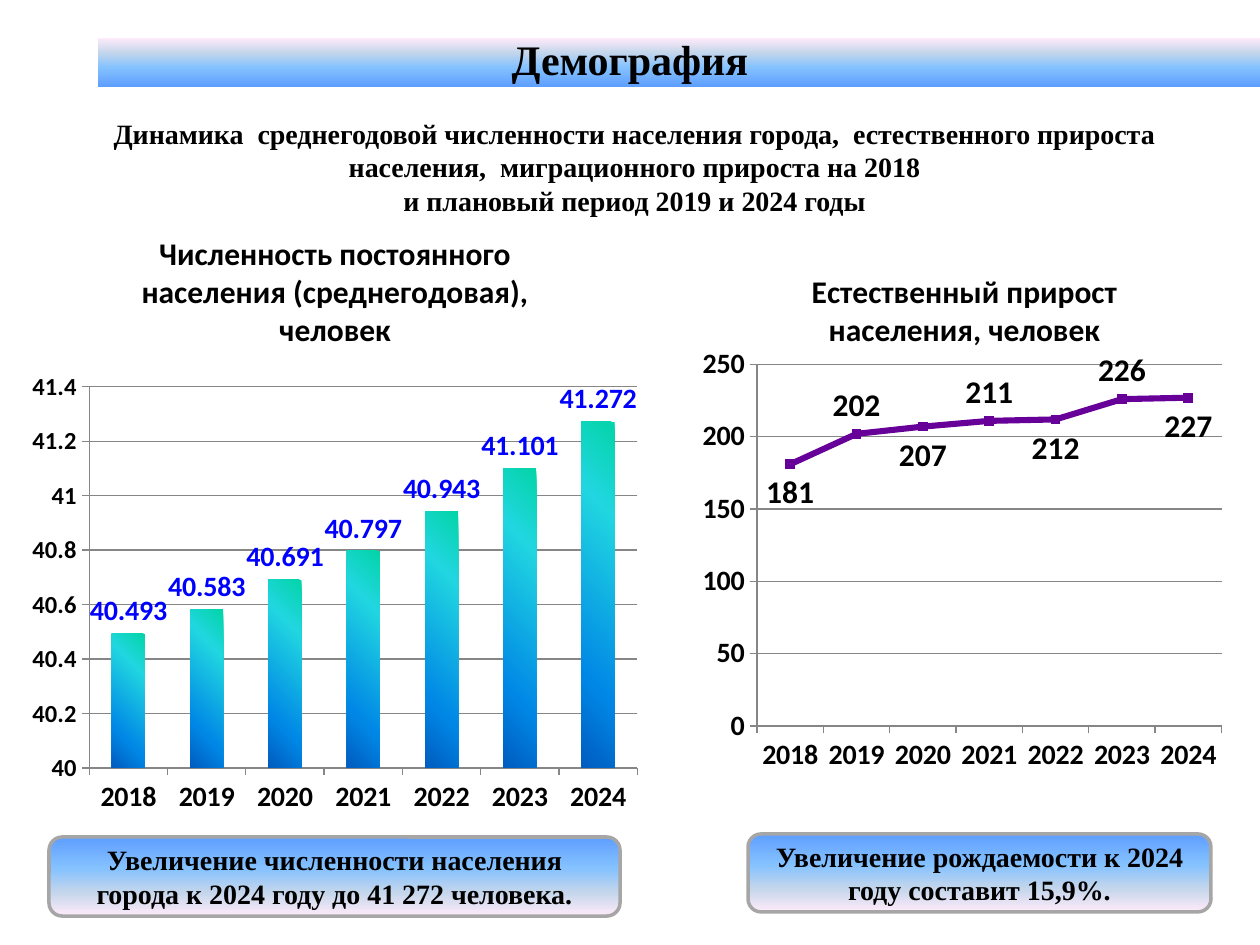
from pptx import Presentation
from pptx.chart.data import CategoryChartData
from pptx.dml.color import RGBColor
from pptx.enum.chart import XL_CHART_TYPE, XL_LABEL_POSITION, XL_MARKER_STYLE, XL_TICK_MARK
from pptx.enum.shapes import MSO_SHAPE
from pptx.enum.text import MSO_ANCHOR, PP_ALIGN
from pptx.oxml import parse_xml
from pptx.oxml.ns import nsdecls, qn
from pptx.util import Emu, Pt

TITLE = "Демография"
SUBTITLE = [
    "Динамика  среднегодовой численности населения города,  естественного прироста "
    "населения,  миграционного прироста на 2018",
    "и плановый период 2019 и 2024 годы",
]
NOTES = [
    ((49, 837, 571, 79), "Увеличение численности населения города к 2024 году до 41 272 человека."),
    ((748, 834, 463, 78), "Увеличение рождаемости к 2024 году составит 15,9%."),
]
YEARS = [str(y) for y in range(2018, 2025)]
POPULATION = dict(
    kind=XL_CHART_TYPE.COLUMN_CLUSTERED, box=(20, 207, 630, 620),
    title="Численность постоянного населения (среднегодовая), человек",
    values=[40.493, 40.583, 40.691, 40.797, 40.943, 41.101, 41.272],
    scale=(40, 41.4, 0.2), tick_size=14, plot=(0.11, 0.29, 0.87, 0.615),
)
GROWTH = dict(
    kind=XL_CHART_TYPE.LINE_MARKERS, box=(669, 246, 591, 559),
    title="Естественный прирост населения, человек",
    values=[181, 202, 207, 211, 212, 226, 227],
    scale=(0, 250, 50), tick_size=16, plot=(0.149, 0.212, 0.786, 0.647),
)
SKY = [(0, "5E9EFF"), (40, "85C2FF"), (70, "C4D6EB"), (100, "FFEBFA")]
SEA = [(0, "03D4A8"), (25, "21D6E0"), (75, "0087E6"), (100, "005CBF")]
PURPLE, GRID = "660099", "868686"


def px(v):
    return Emu(round(v * 914400 / 126))


def rgb(c):
    return RGBColor.from_string(c)


def set_font(font, size, color="000000", name="Calibri"):
    font.size, font.bold, font.name = Pt(size), True, name
    font.color.rgb = rgb(color)


def set_gradient(fill, spPr, stops, angle):
    fill.gradient()
    fill.gradient_angle = 360 - angle
    old = spPr.find(qn("a:gradFill")).find(qn("a:gsLst"))
    gs = "".join(f'<a:gs pos="{p * 1000}"><a:srgbClr val="{c}"/></a:gs>' for p, c in stops)
    old.getparent().replace(old, parse_xml(f'<a:gsLst {nsdecls("a")}>{gs}</a:gsLst>'))


def set_text(sp, lines, size=16):
    tf = sp.text_frame
    tf.word_wrap, tf.vertical_anchor = True, MSO_ANCHOR.MIDDLE
    for i, line in enumerate(lines):
        p = tf.add_paragraph() if i else tf.paragraphs[0]
        p.alignment = PP_ALIGN.CENTER
        r = p.add_run()
        r.text = line
        set_font(r.font, size, name="Times New Roman")


def add_panel(s, shape, box, angle):
    sp = s.shapes.add_shape(shape, *map(px, box))
    sp.shadow.inherit = False
    set_gradient(sp.fill, sp._element.spPr, SKY, angle)
    sp.line.fill.background()
    return sp


def add_chart(s, kind, box, title, values, scale, tick_size, plot):
    data = CategoryChartData()
    data.categories = YEARS
    data.add_series(title, values)
    chart = s.shapes.add_chart(kind, *map(px, box), data).chart
    set_font(chart.font, 18)
    chart.has_legend = False
    chart.has_title = True
    tf = chart.chart_title.text_frame
    tf.text = title
    set_font(tf.paragraphs[0].runs[0].font, 18)
    chart.chart_title.include_in_layout = False

    cat, val = chart.category_axis, chart.value_axis
    val.minimum_scale, val.maximum_scale, val.major_unit = scale
    val.major_gridlines.format.line.color.rgb = rgb(GRID)
    for axis, size in ((cat, 16), (val, tick_size)):
        set_font(axis.tick_labels.font, size)
        axis.format.line.color.rgb = rgb(GRID)
        axis.major_tick_mark = XL_TICK_MARK.OUTSIDE

    area = chart._chartSpace.chart.plotArea
    for old in area.findall(qn("c:layout")):
        area.remove(old)
    sizes = "".join(f'<c:{k} val="{v}"/>' for k, v in zip("xywh", plot))
    area.insert(0, parse_xml(
        f'<c:layout {nsdecls("c")}><c:manualLayout><c:layoutTarget val="inner"/>'
        f'<c:xMode val="edge"/><c:yMode val="edge"/>{sizes}</c:manualLayout></c:layout>'))
    chart.plots[0].vary_by_categories = False
    return chart.plots[0]


def main():
    """Build the demography slide with two charts and their conclusions."""
    prs = Presentation()
    prs.slide_width, prs.slide_height = px(1260), px(945)
    s = prs.slides.add_slide(prs.slide_layouts[6])

    add_panel(s, MSO_SHAPE.RECTANGLE, (98, 38, 1162, 49), 270)
    set_text(s.shapes.add_textbox(*map(px, (0, 27, 1260, 63))), [TITLE], 24)
    set_text(s.shapes.add_textbox(*map(px, (78, 109, 1113, 115))), SUBTITLE)
    for box, text in NOTES:
        sp = add_panel(s, MSO_SHAPE.ROUNDED_RECTANGLE, box, 90)
        sp.line.color.rgb, sp.line.width = rgb("A6A6A6"), Pt(2)
        set_text(sp, [text])

    bars = add_chart(s, **POPULATION)
    bars.gap_width = 137
    ser = bars.series[0]
    set_gradient(ser.format.fill, ser._element.spPr, SEA, 135)
    labels = ser.data_labels
    labels.show_value, labels.position = True, XL_LABEL_POSITION.OUTSIDE_END
    set_font(labels.font, 16, "0000FF")

    ser = add_chart(s, **GROWTH).series[0]
    ser.smooth = False
    ser.format.line.color.rgb, ser.format.line.width = rgb(PURPLE), Pt(3.5)
    ser.marker.style, ser.marker.size = XL_MARKER_STYLE.SQUARE, 5
    ser.marker.format.fill.solid()
    ser.marker.format.fill.fore_color.rgb = rgb(PURPLE)
    ser.marker.format.line.color.rgb = rgb(PURPLE)
    for i in range(len(YEARS)):
        label = ser.points[i].data_label
        set_font(label.font, 18)
        label.position = XL_LABEL_POSITION.ABOVE if i % 2 else XL_LABEL_POSITION.BELOW

    prs.save("out.pptx")


if __name__ == "__main__":
    main()
